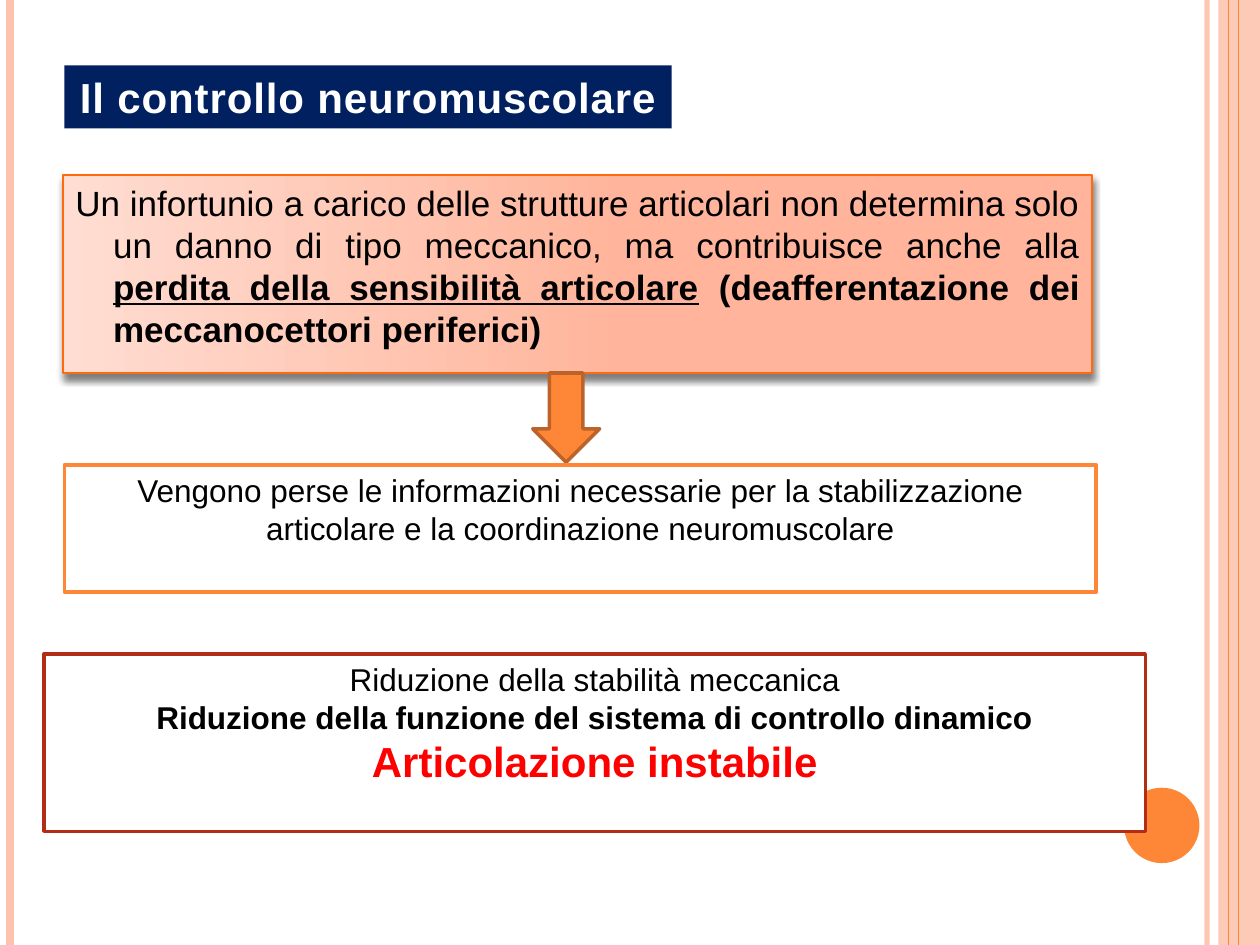
from dataclasses import dataclass

from lxml.etree import SubElement
from pptx import Presentation
from pptx.dml.color import RGBColor
from pptx.enum.shapes import MSO_CONNECTOR, MSO_SHAPE
from pptx.enum.text import MSO_ANCHOR, PP_ALIGN
from pptx.oxml.ns import qn
from pptx.util import Cm, Pt


@dataclass(frozen=True)
class Theme:
    """Colours, font and type sizes of the slide."""
    font: str = "Arial"
    white: str = "FFFFFF"
    black: str = "000000"
    navy: str = "002060"
    pale: str = "FEC3AE"
    orange: str = "FE8637"
    brown: str = "BC6329"
    brick: str = "B32C16"
    red: str = "FF0000"
    light: str = "FFDDD2"
    peach: str = "FFB49B"
    edge: str = "FF6A0F"
    head: int = 24
    body: int = 20
    note: int = 18


THEME = Theme()


def rgb(code):
    """Turn a hex code into a colour."""
    return RGBColor.from_string(code)


def fade(fill, share):
    """Set the opacity of a solid colour element, in percent."""
    color = next(fill.iter(qn("a:srgbClr")))
    SubElement(color, qn("a:alpha"), val=str(share * 1000))


def shade(props, blur, dist, share):
    """Add a soft shadow that falls straight down."""
    effects = props.find(qn("a:effectLst"))
    if effects is None:
        effects = SubElement(props, qn("a:effectLst"))
    drop = SubElement(effects, qn("a:outerShdw"), blurRad=str(Pt(blur)),
                      dist=str(Pt(dist)), dir="5400000", algn="t", rotWithShape="0")
    color = SubElement(drop, qn("a:srgbClr"), val=THEME.black)
    SubElement(color, qn("a:alpha"), val=str(share * 1000))


def block(slide, box, kind, fill, line=None, width=2):
    """Draw a flat preset shape in a box."""
    shape = slide.shapes.add_shape(kind, *box)
    shape.shadow.inherit = False
    shape.fill.solid()
    shape.fill.fore_color.rgb = rgb(fill)
    if line:
        shape.line.color.rgb = rgb(line)
        shape.line.width = Pt(width)
    else:
        shape.line.fill.background()
    return shape


def style(par, size, color, bold=False, align=PP_ALIGN.CENTER):
    """Set the alignment and font of a paragraph."""
    par.alignment = align
    font = par.font
    font.name, font.size, font.bold = THEME.font, Pt(size), bold
    font.color.rgb = rgb(color)
    for run in par.runs:
        run.font.color.rgb = rgb(color)


def frame(slide, box):
    """Draw the side rails, the right band and the disc."""
    left, top, width, height = box
    right, foot = left + width, top + height
    band = block(slide, (right - Cm(0.84), top, Cm(0.84), height),
                 MSO_SHAPE.RECTANGLE, THEME.pale)
    fade(band.fill._xPr, 87)
    rails = [
        (right - Cm(1.07), THEME.pale, 3, 93),
        (left + Cm(0.2), THEME.pale, 4.5, 100),
        (right - Cm(0.43), THEME.orange, 0.75, 100),
        (right - Cm(0.63), THEME.orange, 0.75, 100),
    ]
    for x, color, weight, share in rails:
        rail = slide.shapes.add_connector(MSO_CONNECTOR.STRAIGHT, x, top, x, foot)
        rail.line.color.rgb = rgb(color)
        rail.line.width = Pt(weight)
        fade(rail.line._ln, share)
        SubElement(rail._element.spPr, qn("a:effectLst"))
    block(slide, (right - Cm(2.74), foot - Cm(3.17), Cm(1.52), Cm(1.52)),
          MSO_SHAPE.OVAL, THEME.orange)


def title(slide, box, text):
    """Place the heading on its dark bar."""
    bar = block(slide, box, MSO_SHAPE.RECTANGLE, THEME.navy)
    bar.text_frame.word_wrap = False
    par = bar.text_frame.paragraphs[0]
    run = par.add_run()
    run.text = text
    style(par, THEME.head, THEME.white, True)
    props = run.font._element
    props.set("spc", "50")
    shade(props, 2, 1, 40)


def cause(slide, box, parts):
    """Place the shaded opening statement with a hanging indent."""
    panel = block(slide, box, MSO_SHAPE.RECTANGLE, THEME.white, THEME.edge, 1.25)
    panel.fill.gradient()
    panel.fill.gradient_angle = 0
    first, last = panel.fill.gradient_stops
    first.color.rgb, first.position = rgb(THEME.light), 0
    last.color.rgb, last.position = rgb(THEME.peach), 0.55
    shade(panel._element.spPr, 4, 3, 50)
    text = panel.text_frame
    text.word_wrap = True
    text.vertical_anchor = MSO_ANCHOR.TOP
    par = text.paragraphs[0]
    props = par._p.get_or_add_pPr()
    props.set("marL", str(Cm(0.76)))
    props.set("indent", str(-Cm(0.76)))
    for words, bold, under in parts:
        run = par.add_run()
        run.text = words
        run.font.bold, run.font.underline = bold, under
    style(par, THEME.body, THEME.black, None, PP_ALIGN.JUSTIFY)


def panel(slide, box, line, rows):
    """Place centred rows of text in an outlined white box."""
    shape = block(slide, box, MSO_SHAPE.RECTANGLE, THEME.white, line)
    text = shape.text_frame
    text.word_wrap = True
    text.vertical_anchor = MSO_ANCHOR.TOP
    for spot, (words, size, color, bold) in enumerate(rows):
        par = text.add_paragraph() if spot else text.paragraphs[0]
        par.add_run().text = words
        style(par, size, color, bold)


def main():
    """Build and save the slide."""
    deck = Presentation()
    deck.slide_width, deck.slide_height = Cm(25.4), Cm(19.05)
    slide = deck.slides.add_slide(deck.slide_layouts[6])
    frame(slide, (0, 0, deck.slide_width, deck.slide_height))
    cause(slide, (Cm(1.27), Cm(3.53), Cm(20.75), Cm(3.99)), [
        ("Un infortunio a carico delle strutture articolari non determina solo "
         "un danno di tipo meccanico, ma contribuisce anche alla ", False, False),
        ("perdita della sensibilità articolare", True, True),
        (" (deafferentazione dei meccanocettori periferici)", True, False),
    ])
    title(slide, (Cm(1.3), Cm(1.32), Cm(12.24), Cm(1.27)), "Il controllo neuromuscolare")
    block(slide, (Cm(10.74), Cm(7.52), Cm(1.35), Cm(1.8)),
          MSO_SHAPE.DOWN_ARROW, THEME.orange, THEME.brown)
    panel(slide, (Cm(1.3), Cm(9.37), Cm(20.8), Cm(2.57)), THEME.orange, [
        ("Vengono perse le informazioni necessarie per la stabilizzazione "
         "articolare e la coordinazione neuromuscolare", THEME.note, THEME.black, False),
    ])
    panel(slide, (Cm(0.89), Cm(13.18), Cm(22.2), Cm(3.58)), THEME.brick, [
        ("Riduzione della stabilità meccanica", THEME.note, THEME.black, False),
        ("Riduzione della funzione del sistema di controllo dinamico",
         THEME.note, THEME.black, True),
        ("Articolazione instabile", THEME.head, THEME.red, True),
    ])
    deck.save("out.pptx")


if __name__ == "__main__":
    main()
